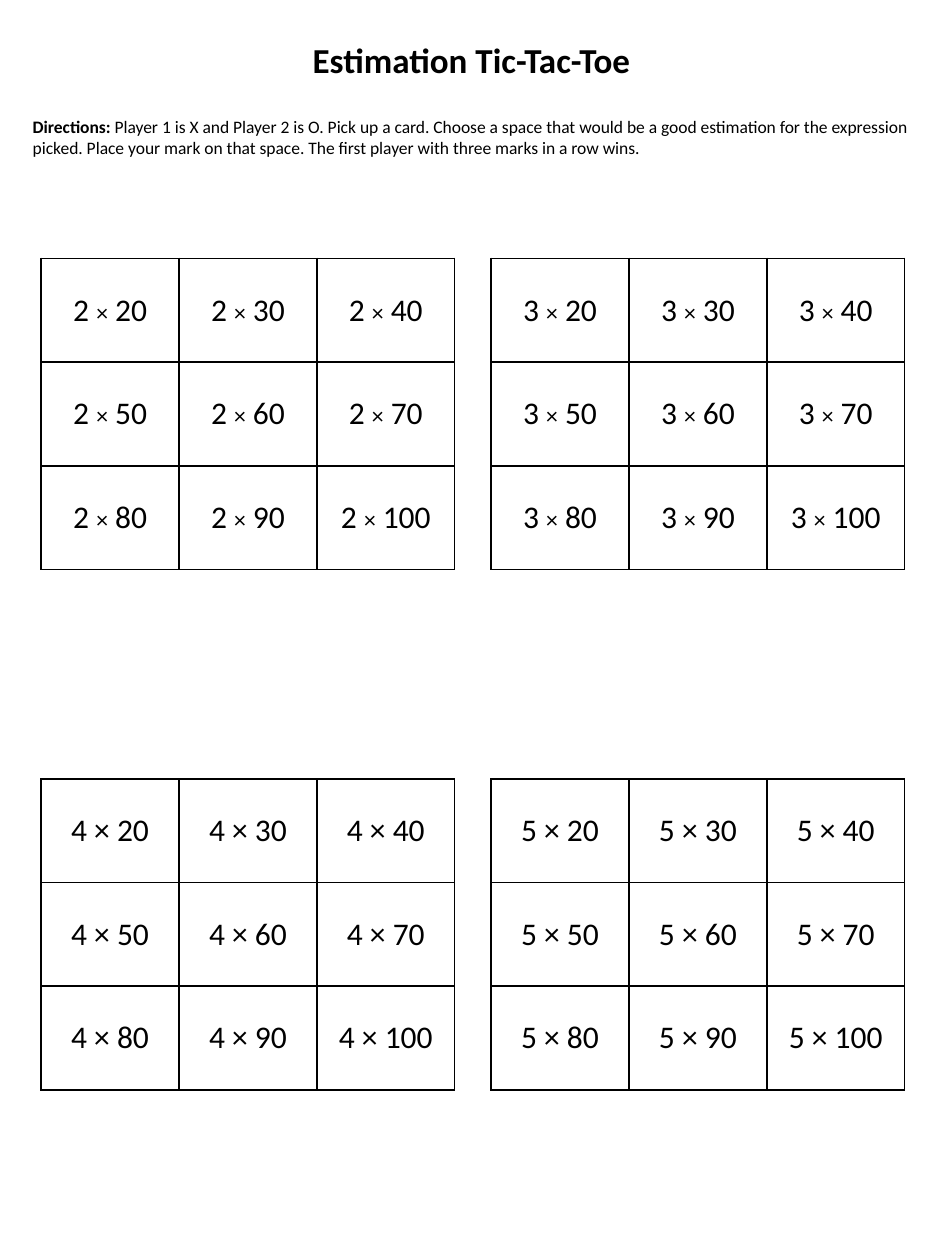
"""Build a one-page Estimation Tic-Tac-Toe game sheet."""
import pptx
import pptx.dml.color
import pptx.enum.shapes
import pptx.enum.text
import pptx.oxml
import pptx.oxml.ns
import pptx.util

Cm, Pt = pptx.util.Cm, pptx.util.Pt
ALIGN = pptx.enum.text.PP_ALIGN
MIDDLE = pptx.enum.text.MSO_ANCHOR.MIDDLE

FONT, INK, PAPER = "Calibri", "000000", "FFFFFF"
TITLE = "Estimation Tic-Tac-Toe"
LABEL = "Directions:"
RULES = (
    " Player 1 is X and Player 2 is O. Pick up a card. "
    "Choose a space that would be a good estimation for the expression picked. "
    "Place your mark on that space. "
    "The first player with three marks in a row wins."
)
BOARDS = [(2, 13.5), (3, 13.5), (4, 18), (5, 18)]
TENS = [20, 30, 40, 50, 60, 70, 80, 90, 100]

LEFTS, TOPS = (0.83, 9.9), (5.21, 15.7)
SIDE, COL, ROW = 3, 2.78, 2.09
BAND = 1.57


def color(code):
    return pptx.dml.color.RGBColor.from_string(code)


def write(para, text, size=18, bold=False, align=ALIGN.CENTER):
    para.alignment = align
    run = para.add_run()
    run.text = text
    run.font.name = FONT
    run.font.size = Pt(size)
    run.font.bold = bold
    run.font.color.rgb = color(INK)


def band(slide, row):
    kind = pptx.enum.shapes.MSO_SHAPE.RECTANGLE
    top = 0.41 + row * BAND
    box = slide.shapes.add_shape(kind, Cm(0.41), Cm(top), Cm(18.19), Cm(BAND))
    box.shadow.inherit = False
    box.fill.solid()
    box.fill.fore_color.rgb = color(PAPER)
    box.line.color.rgb = color(PAPER)
    box.line.width = Pt(1)
    box.text_frame.word_wrap = True
    box.text_frame.vertical_anchor = MIDDLE
    return box.text_frame.paragraphs[0]


def border(cell):
    props = cell._tc.get_or_add_tcPr()
    for spot, edge in enumerate(("lnL", "lnR", "lnT", "lnB")):
        props.insert(spot, pptx.oxml.parse_xml(
            f'<a:{edge} {pptx.oxml.ns.nsdecls("a")} w="{Pt(1)}">'
            f'<a:solidFill><a:srgbClr val="{INK}"/></a:solidFill></a:{edge}>'
        ))


def board(slide, left, top, num, size):
    frame = slide.shapes.add_table(
        SIDE, SIDE, Cm(left), Cm(top), Cm(SIDE * COL), Cm(SIDE * ROW)
    )
    grid = frame.table
    grid.first_row = grid.horz_banding = False
    for col in grid.columns:
        col.width = Cm(COL)
    for row in grid.rows:
        row.height = Cm(ROW)
    for cell, ten in zip(grid.iter_cells(), TENS):
        cell.fill.background()
        cell.vertical_anchor = MIDDLE
        border(cell)
        para = cell.text_frame.paragraphs[0]
        if size == 18:
            write(para, f"{num} × {ten}")
        else:
            write(para, f"{num} ")
            write(para, "×", size=size)
            write(para, f" {ten}")


def main():
    deck = pptx.Presentation()
    deck.slide_width, deck.slide_height = Cm(19.05), Cm(25.4)
    slide = deck.slides.add_slide(deck.slide_layouts[6])
    write(band(slide, 0), TITLE, size=20, bold=True)
    para = band(slide, 1)
    write(para, LABEL, size=10, bold=True, align=ALIGN.LEFT)
    write(para, RULES, size=10, align=ALIGN.LEFT)
    spots = [(left, top) for top in TOPS for left in LEFTS]
    for (left, top), (num, size) in zip(spots, BOARDS):
        board(slide, left, top, num, size)
    deck.save("out.pptx")


if __name__ == "__main__":
    main()
